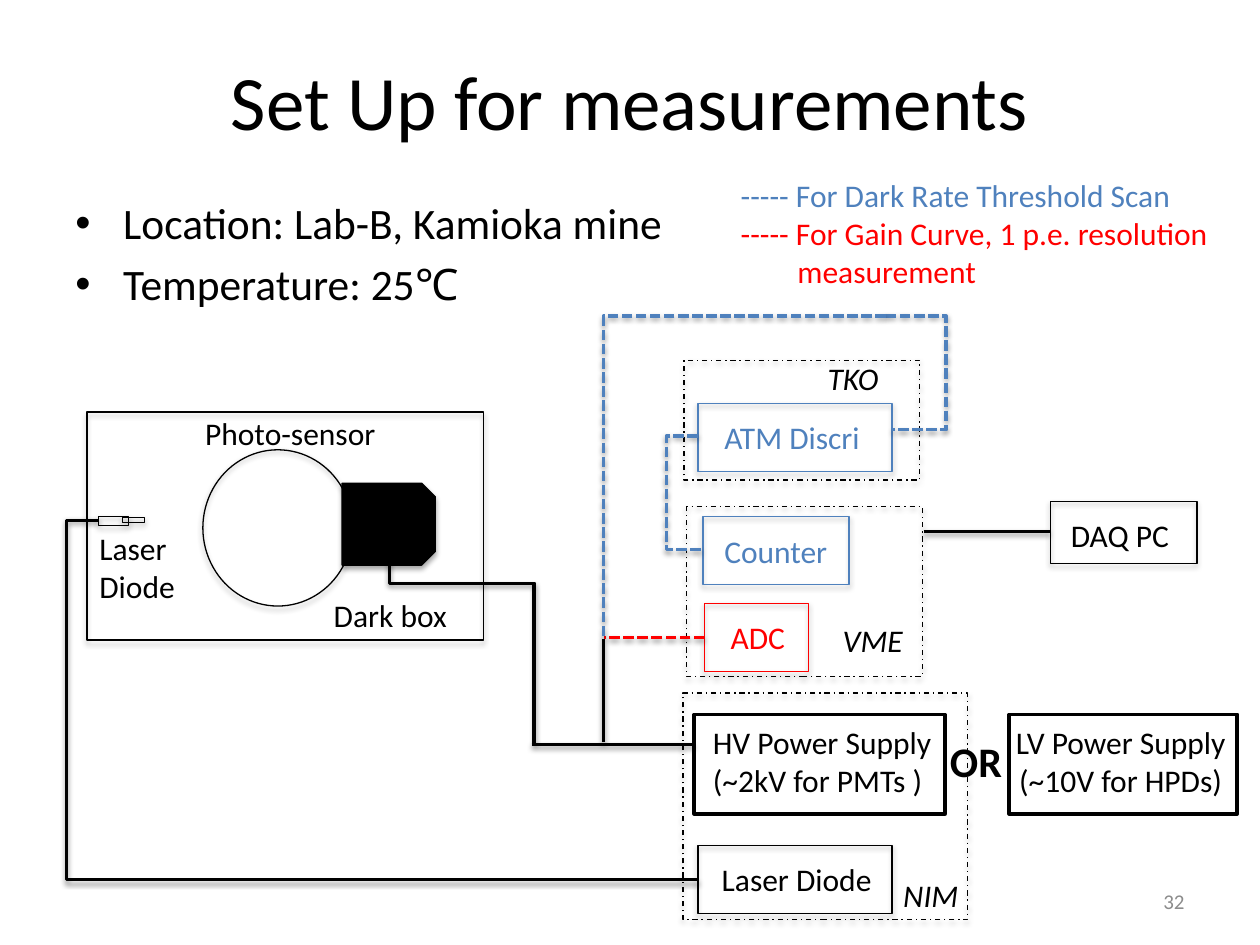
from lxml.etree import SubElement
from pptx import Presentation
from pptx.dml.color import RGBColor
from pptx.enum.dml import MSO_LINE
from pptx.enum.shapes import MSO_CONNECTOR, MSO_SHAPE
from pptx.enum.text import MSO_ANCHOR, PP_ALIGN
from pptx.oxml.ns import qn
from pptx.util import Inches, Pt

BLACK = RGBColor(0x00, 0x00, 0x00)
BLUE = RGBColor(0x4F, 0x81, 0xBD)
RED = RGBColor(0xFF, 0x00, 0x00)
GRAY = RGBColor(0x8C, 0x8C, 0x8C)
FONT = "Calibri"
THIN, THICK = 0.75, 2


def style(p, size, color, bold=False, italic=False):
    p.font.name = FONT
    p.font.size = Pt(size)
    p.font.color.rgb = color
    p.font.bold = bold
    p.font.italic = italic


def add_shadow(sp, dist, opacity):
    """Give a shape or connector a soft shadow that falls straight down."""
    effects = SubElement(sp._element.spPr, qn("a:effectLst"))
    shadow = SubElement(effects, qn("a:outerShdw"), blurRad=str(Pt(3.1)),
                        dist=str(Pt(dist)), dir="5400000", rotWithShape="0")
    color = SubElement(shadow, qn("a:srgbClr"), val=str(BLACK))
    SubElement(color, qn("a:alpha"), val=str(opacity * 1000))


def add_label(s, x, y, w, h, lines, color=BLACK, size=18, wrap=False,
              align=PP_ALIGN.LEFT, **emphasis):
    tb = s.shapes.add_textbox(Inches(x), Inches(y), Inches(w), Inches(h))
    tf = tb.text_frame
    tf.word_wrap = wrap
    tf.text = lines
    for p in tf.paragraphs:
        p.alignment = align
        style(p, size, color, **emphasis)
    return tf


def add_box(s, x, y, w, h, color=BLACK, width=THIN, dash=None, fill=None,
            kind=MSO_SHAPE.RECTANGLE, rotation=0, shadow=True):
    sp = s.shapes.add_shape(kind, Inches(x), Inches(y), Inches(w), Inches(h))
    sp.rotation = rotation
    if fill is None:
        sp.fill.background()
    else:
        sp.fill.solid()
        sp.fill.fore_color.rgb = fill
    sp.line.color.rgb = color
    sp.line.width = Pt(width)
    sp.line.dash_style = dash
    if shadow:
        add_shadow(sp, 1.8, 35)
    else:
        sp.shadow.inherit = False


def add_wire(s, start, end, color=BLACK, dash=None, kind=MSO_CONNECTOR.STRAIGHT):
    wire = s.shapes.add_connector(kind, *(Inches(v) for v in (*start, *end)))
    wire.line.color.rgb = color
    wire.line.width = Pt(THICK)
    wire.line.dash_style = dash
    add_shadow(wire, 1.6, 38)
    return wire


def add_elbow(s, start, end, bend, vertical=False, **look):
    """Add a three-part wire whose middle part lies at x = bend,
    or at y = bend when the wire leaves vertically."""
    axis = 1 if vertical else 0
    ratio = (bend - start[axis]) / (end[axis] - start[axis])
    if vertical:
        # Turn the end points back by 90 degrees; the frame turns them again.
        cx, cy = (start[0] + end[0]) / 2, (start[1] + end[1]) / 2
        dx, dy = (end[0] - start[0]) / 2, (end[1] - start[1]) / 2
        start, end = (cx - dy, cy + dx), (cx + dy, cy - dx)
    wire = add_wire(s, start, end, kind=MSO_CONNECTOR.ELBOW, **look)
    sp_pr = wire._element.spPr
    if vertical:
        sp_pr.find(qn("a:xfrm")).set("rot", "5400000")
    guides = sp_pr.find(qn("a:prstGeom")).get_or_add_avLst()
    SubElement(guides, qn("a:gd"), name="adj1", fmla=f"val {round(ratio * 100000)}")


def add_title(s):
    title = s.shapes.title
    title.left, title.top = Inches(0.5), Inches(0.17)
    title.width, title.height = Inches(9), Inches(1.25)
    tf = title.text_frame
    tf.text = "Set Up for measurements"
    tf.vertical_anchor = MSO_ANCHOR.MIDDLE
    tf.paragraphs[0].alignment = PP_ALIGN.CENTER
    style(tf.paragraphs[0], 44, BLACK)


def add_conditions(s):
    tf = add_label(s, 0.5, 1.51, 9, 0.86,
                   "Location: Lab-B, Kamioka mine\nTemperature: 25℃",
                   size=24.8, wrap=True)
    for p in tf.paragraphs:
        p.space_before = Pt(5)
        p_pr = p._p.get_or_add_pPr()
        p_pr.set("marL", str(Inches(0.38)))
        p_pr.set("indent", str(-Inches(0.38)))
        bullet_font = SubElement(p_pr, qn("a:buFont"), typeface="Arial")
        bullet = SubElement(p_pr, qn("a:buChar"), char="•")
        p_pr.find(qn("a:defRPr")).addprevious(bullet_font)
        bullet_font.addnext(bullet)


def add_legend(s):
    tf = add_label(s, 5.78, 1.35, 3.95, 1.01,
                   "----- For Dark Rate Threshold Scan\n"
                   "----- For Gain Curve, 1 p.e. resolution\nmeasurement", RED)
    tf.paragraphs[0].font.color.rgb = BLUE
    tf.paragraphs[2]._p.get_or_add_pPr().set("marL", str(Inches(0.45)))


def add_dark_box(s):
    add_box(s, 0.69, 3.27, 3.15, 1.81)
    add_label(s, 2.55, 4.68, 1.11, 0.4, "Dark box")
    add_box(s, 1.61, 3.57, 1.19, 1.24, kind=MSO_SHAPE.OVAL)
    add_label(s, 1.53, 3.24, 1.57, 0.4, "Photo-sensor")
    add_box(s, 2.76, 3.79, 0.65, 0.74, fill=BLACK, rotation=90,
            kind=MSO_SHAPE.SNIP_2_SAME_RECTANGLE)
    add_box(s, 0.78, 4.1, 0.24, 0.07)
    add_box(s, 0.97, 4.11, 0.18, 0.04)
    add_label(s, 0.69, 4.15, 0.81, 0.71, "Laser\nDiode")


def add_crates(s):
    for x, y, w, h in ((5.43, 2.86, 1.87, 0.95), (5.45, 4.02, 1.87, 1.35),
                       (5.42, 5.5, 2.26, 1.8)):
        add_box(s, x, y, w, h, dash=MSO_LINE.DASH_DOT)
    for x, y, w, name in ((6.47, 2.8, 0.69, "TKO"), (6.59, 4.88, 0.76, "VME"),
                          (7.07, 6.9, 0.72, "NIM")):
        add_label(s, x, y, w, 0.4, name, italic=True)


def add_modules(s):
    for x, y, w, h, color, text_x, name in (
            (5.54, 3.2, 1.54, 0.54, BLUE, 5.65, "ATM Discri"),
            (5.58, 4.1, 1.16, 0.54, BLUE, 5.65, "Counter"),
            (5.59, 4.79, 0.83, 0.54, RED, 5.7, "ADC"),
            (5.54, 6.71, 1.54, 0.54, BLACK, 5.63, "Laser Diode"),
            (8.34, 3.98, 1.16, 0.49, BLACK, 8.4, "DAQ PC")):
        add_box(s, x, y, w, h, color)
        add_label(s, text_x, y + 0.07, w, 0.4, name, color)


def add_power_supplies(s):
    add_box(s, 5.51, 5.67, 1.99, 0.79, width=THICK, shadow=False)
    add_label(s, 5.56, 5.69, 1.94, 0.71, "HV Power Supply\n(~2kV for PMTs )")
    add_box(s, 8.01, 5.67, 1.81, 0.79, width=THICK, shadow=False)
    add_label(s, 7.96, 5.69, 1.87, 0.71, "LV Power Supply\n(~10V for HPDs)",
              align=PP_ALIGN.CENTER)
    add_label(s, 7.44, 5.79, 0.62, 0.5, "OR", size=24, bold=True)


def add_wiring(s):
    blue_dash = {"color": BLUE, "dash": MSO_LINE.SQUARE_DOT}
    add_elbow(s, (3.09, 4.34), (4.24, 5.9), 4.63, vertical=True)
    add_wire(s, (4.22, 5.91), (5.51, 5.91))
    add_elbow(s, (0.78, 4.13), (5.54, 6.98), 0.53)
    add_wire(s, (4.79, 5.89), (4.79, 5.07))
    add_wire(s, (5.59, 5.06), (4.79, 5.06), RED, MSO_LINE.SQUARE_DOT)
    add_elbow(s, (5.54, 3.46), (5.58, 4.36), 5.29, **blue_dash)
    add_elbow(s, (7.03, 2.51), (7.08, 3.41), 7.51, **blue_dash)
    add_elbow(s, (7.03, 2.51), (4.79, 5.06), 2.51, vertical=True, **blue_dash)
    add_wire(s, (7.33, 4.22), (8.33, 4.22))


def main():
    prs = Presentation()
    prs.slide_width, prs.slide_height = Inches(10), Inches(7.5)
    s = prs.slides.add_slide(prs.slide_layouts[5])
    add_title(s)
    add_conditions(s)
    add_dark_box(s)
    add_crates(s)
    add_modules(s)
    add_power_supplies(s)
    add_wiring(s)
    add_legend(s)
    number = add_label(s, 7.17, 6.95, 2.33, 0.4, "32", GRAY, 12, wrap=True,
                       align=PP_ALIGN.RIGHT)
    number.vertical_anchor = MSO_ANCHOR.MIDDLE
    prs.save("out.pptx")


if __name__ == "__main__":
    main()
